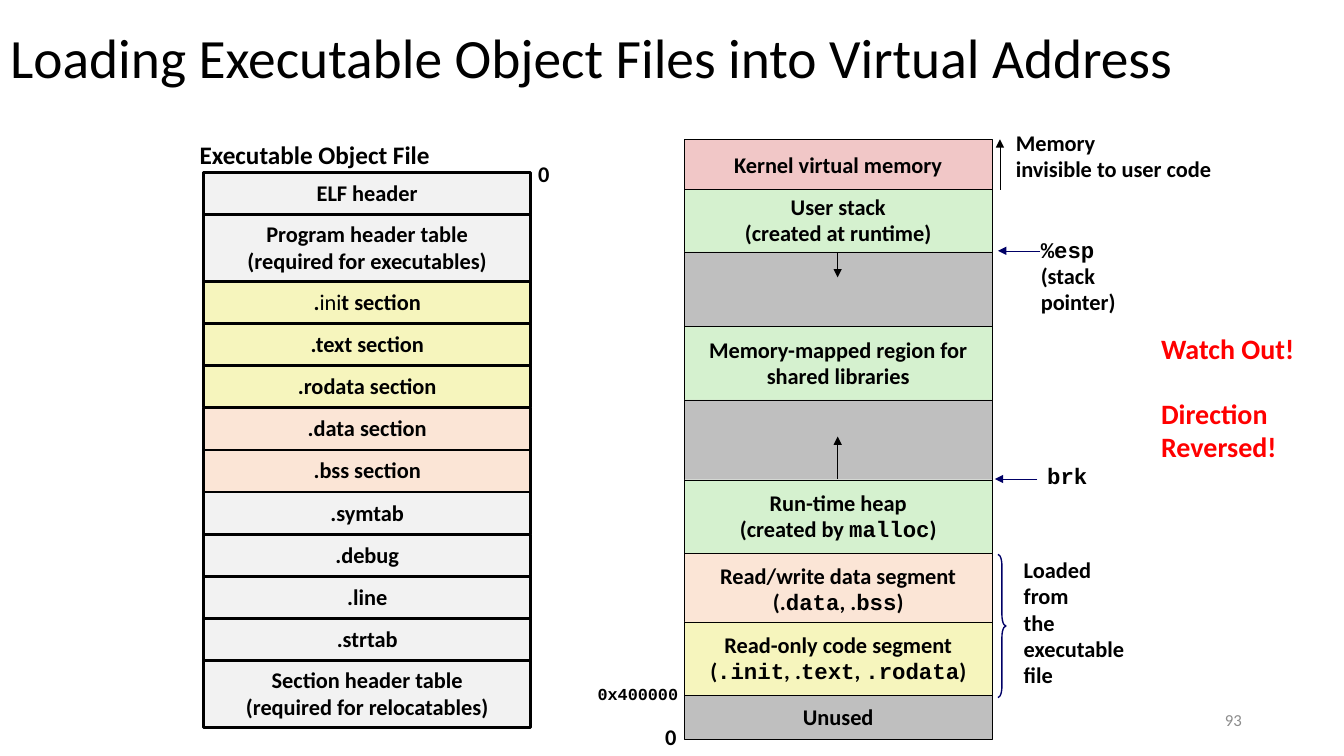
import pptx
import pptx.dml.color
import pptx.enum.shapes
import pptx.enum.text
import pptx.oxml
import pptx.oxml.ns
import pptx.util
from pptx.util import Cm

SANS, MONO = "Calibri", "Courier New"
BLACK, NAVY, RED = "000000", "000066", "FF0000"
GREY, SILVER, YELLOW = "F2F2F2", "BFBFBF", "F6F5BD"
PEACH, GREEN, PINK = "FBE5D6", "D5F1CF", "F1C7C7"
LEFT, CENTER, RIGHT = (pptx.enum.text.PP_ALIGN.LEFT, pptx.enum.text.PP_ALIGN.CENTER,
                       pptx.enum.text.PP_ALIGN.RIGHT)
MIDDLE = pptx.enum.text.MSO_ANCHOR.MIDDLE

FILE_LEFT, FILE_TOP, FILE_WIDTH = 5.13, 4.34, 8.25
LINE_HEIGHT, TABLE_HEIGHT = 1.06, 1.7
FILE_PARTS = [
    ("ELF header", GREY, LINE_HEIGHT),
    ("Program header table\n(required for executables)", GREY, TABLE_HEIGHT),
    (".~ini~t section", YELLOW, LINE_HEIGHT),
    (".text section", YELLOW, LINE_HEIGHT),
    (".rodata section", YELLOW, LINE_HEIGHT),
    (".data section", PEACH, LINE_HEIGHT),
    (".bss section", PEACH, LINE_HEIGHT),
    (".symtab", GREY, LINE_HEIGHT),
    (".debug", GREY, LINE_HEIGHT),
    (".line", GREY, LINE_HEIGHT),
    (".strtab", GREY, LINE_HEIGHT),
    ("Section header table\n(required for relocatables)", GREY, TABLE_HEIGHT),
]

MEMORY_LEFT, MEMORY_WIDTH = 17.25, 7.75
# text, fill, top, height; some regions reach a little under the next one
MEMORY_REGIONS = [
    ("Kernel virtual memory", PINK, 3.51, 1.35),
    ("User stack\n(created at runtime)", GREEN, 4.78, 1.57),
    ("", SILVER, 6.35, 1.88),
    ("Memory-mapped region for\nshared libraries", GREEN, 8.23, 1.85),
    ("", SILVER, 10.08, 2.01),
    ("Run-time heap\n(created by `malloc`)", GREEN, 12.09, 1.85),
    ("Read/write data segment\n(.`data`, .`bss`)", PEACH, 13.94, 1.85),
    ("Read-only code segment\n(`.init`, .`text`, `.rodata`)", YELLOW, 15.67, 1.86),
    ("Unused", SILVER, 17.53, 1.09),
]

# text, left, top, width, height, size
LABELS = [
    ("0", 13.31, 3.94, 0.79, 0.94, 16),
    ("Executable Object File", 4.78, 3.43, 6.35, 1.02, 18),
    ("0", 16.51, 18.14, 0.79, 0.94, 16),
    ("`%esp`\n(stack\npointer)", 25.98, 5.87, 2.41, 2.24, 16),
    ("Memory\ninvisible to user code", 25.35, 3.15, 7.11, 1.6, 16),
    ("`brk`", 26.14, 11.58, 1.52, 0.91, 16),
    ("`0x400000`", 14.81, 17.15, 2.57, 0.76, 12),
    ("Loaded\nfrom\nthe\nexecutable\nfile", 25.55, 13.92, 3.2, 3.61, 16),
]

# from x, from y, to x, to y, colour
ARROWS = [
    (21.11, 12.07, 21.11, 11, BLACK),
    (21.11, 6.35, 21.11, 6.99, BLACK),
    (25.2, 4.78, 25.2, 3.51, BLACK),
    (26.21, 6.32, 25.15, 6.32, NAVY),
    (26.14, 12.07, 25.07, 12.07, NAVY),
]


def color(hex_value):
    return pptx.dml.color.RGBColor.from_string(hex_value)


def style_span(span, size, ink, bold=True, font=SANS):
    span.font.size = pptx.util.Pt(size)
    span.font.name = font
    span.font.bold = bold
    span.font.color.rgb = color(ink)


def write(frame, text, size=16, ink=BLACK, align=LEFT, bold=True):
    """Fill a frame; `backticks` mark monospaced spans and ~tildes~ light ones."""
    frame.text = ""
    for index, line in enumerate(text.split("\n")):
        para = frame.add_paragraph() if index else frame.paragraphs[0]
        para.alignment = align
        para.line_spacing = 0.94 if line.startswith("`") else 0.98
        mark = "~" if "~" in line else "`"
        for number, part in enumerate(line.split(mark)):
            if part:
                span = para.add_run()
                span.text = part
                marked = number % 2 == 1
                style_span(span, size, ink, bold and not (marked and mark == "~"),
                           MONO if marked and mark == "`" else SANS)


def add_block(page, text, fill, left, top, width, height, line_width):
    block = page.shapes.add_shape(pptx.enum.shapes.MSO_SHAPE.RECTANGLE,
                                  Cm(left), Cm(top), Cm(width), Cm(height))
    block.shadow.inherit = False
    block.fill.solid()
    block.fill.fore_color.rgb = color(fill)
    block.line.color.rgb = color(BLACK)
    block.line.width = pptx.util.Pt(line_width)
    if text:
        block.text_frame.word_wrap = False
        block.text_frame.vertical_anchor = MIDDLE
        write(block.text_frame, text, align=CENTER)


def add_label(page, text, left, top, width, height, size, wrap=False, **style):
    box = page.shapes.add_textbox(Cm(left), Cm(top), Cm(width), Cm(height))
    box.text_frame.word_wrap = wrap
    write(box.text_frame, text, size, **style)
    return box


def add_arrow(page, from_x, from_y, to_x, to_y, ink):
    arrow = page.shapes.add_connector(pptx.enum.shapes.MSO_CONNECTOR.STRAIGHT,
                                      Cm(from_x), Cm(from_y), Cm(to_x), Cm(to_y))
    arrow.line.color.rgb = color(ink)
    arrow.line.width = pptx.util.Pt(0.25)
    head = pptx.oxml.parse_xml(
        '<a:tailEnd %s type="triangle"/>' % pptx.oxml.ns.nsdecls("a"))
    arrow.line._get_or_add_ln().append(head)
    arrow._element.spPr.append(pptx.oxml.parse_xml(
        "<a:effectLst %s/>" % pptx.oxml.ns.nsdecls("a")))


def add_brace(page):
    brace = page.shapes.add_shape(pptx.enum.shapes.MSO_SHAPE.RIGHT_BRACE,
                                  Cm(25.15), Cm(13.97), Cm(0.2), Cm(3.61))
    brace.adjustments[0] = 1.42
    brace.shadow.inherit = False
    brace.fill.background()
    brace.line.color.rgb = color(NAVY)
    brace.line.width = pptx.util.Pt(1)


def set_title(page, text):
    title = page.shapes.title
    title.left, title.top, title.width, title.height = Cm(0), Cm(-0.13), Cm(31.55), Cm(3.3)
    frame = title.text_frame
    frame.auto_size = pptx.enum.text.MSO_AUTO_SIZE.NONE
    frame.vertical_anchor = MIDDLE
    write(frame, text, 39.6, bold=False)
    frame.paragraphs[0].line_spacing = 0.9


def main():
    deck = pptx.Presentation()
    deck.slide_width, deck.slide_height = Cm(33.87), Cm(19.05)
    page = deck.slides.add_slide(deck.slide_layouts.get_by_name("Title Only"))
    set_title(page, "Loading Executable Object Files into Virtual Address")

    top = FILE_TOP
    for text, fill, height in FILE_PARTS:
        add_block(page, text, fill, FILE_LEFT, top, FILE_WIDTH, height, 2)
        top += height
    for text, fill, top, height in MEMORY_REGIONS:
        add_block(page, text, fill, MEMORY_LEFT, top, MEMORY_WIDTH, height, 0.25)

    for label in LABELS:
        add_label(page, *label)
    for arrow in ARROWS:
        add_arrow(page, *arrow)
    add_brace(page)

    warning = add_label(page, "Watch Out!\nDirection Reversed!",
                        29.01, 8.26, 4.22, 3.61, 20, wrap=True, ink=RED)
    warning.text_frame.paragraphs[1].space_before = pptx.util.Pt(23)
    number = add_label(page, "93", 23.93, 17.65, 7.62, 1.02, 12, wrap=True,
                       ink="8C8C8C", align=RIGHT, bold=False)
    number.text_frame.vertical_anchor = MIDDLE
    deck.save("out.pptx")


if __name__ == "__main__":
    main()
